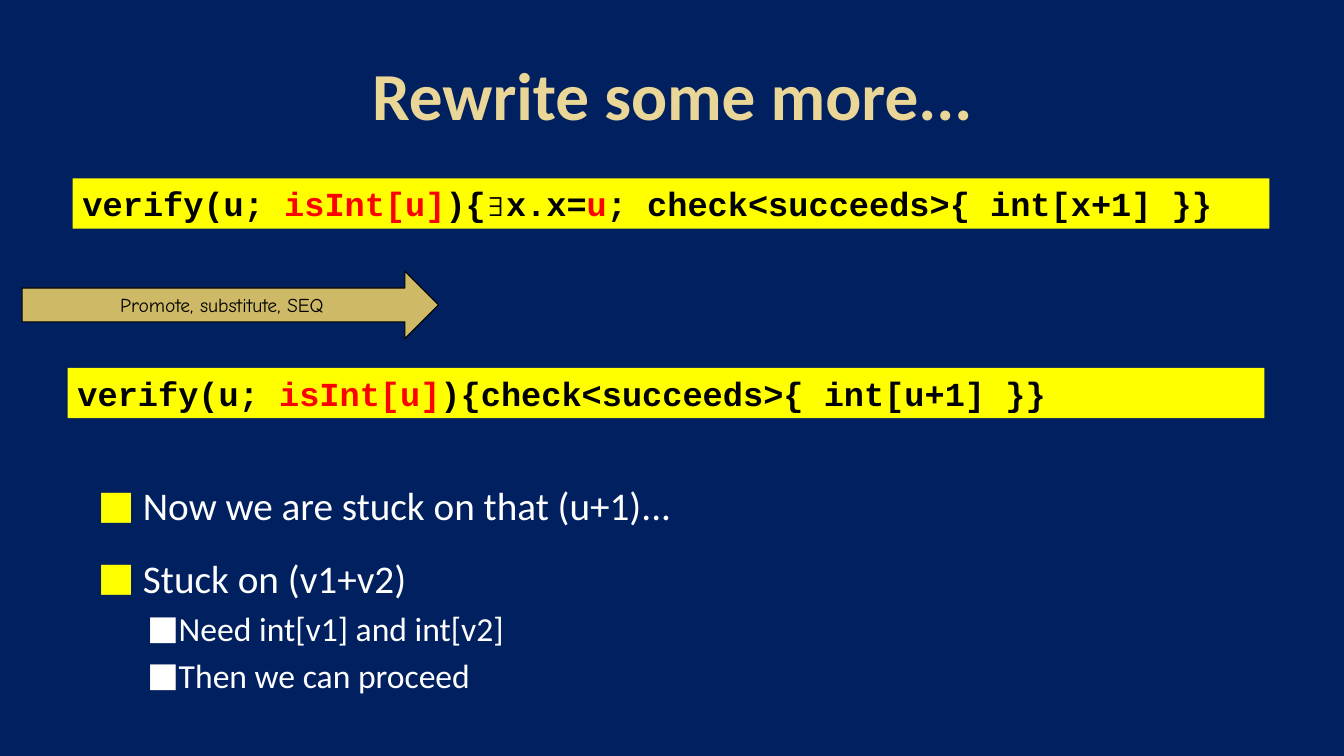
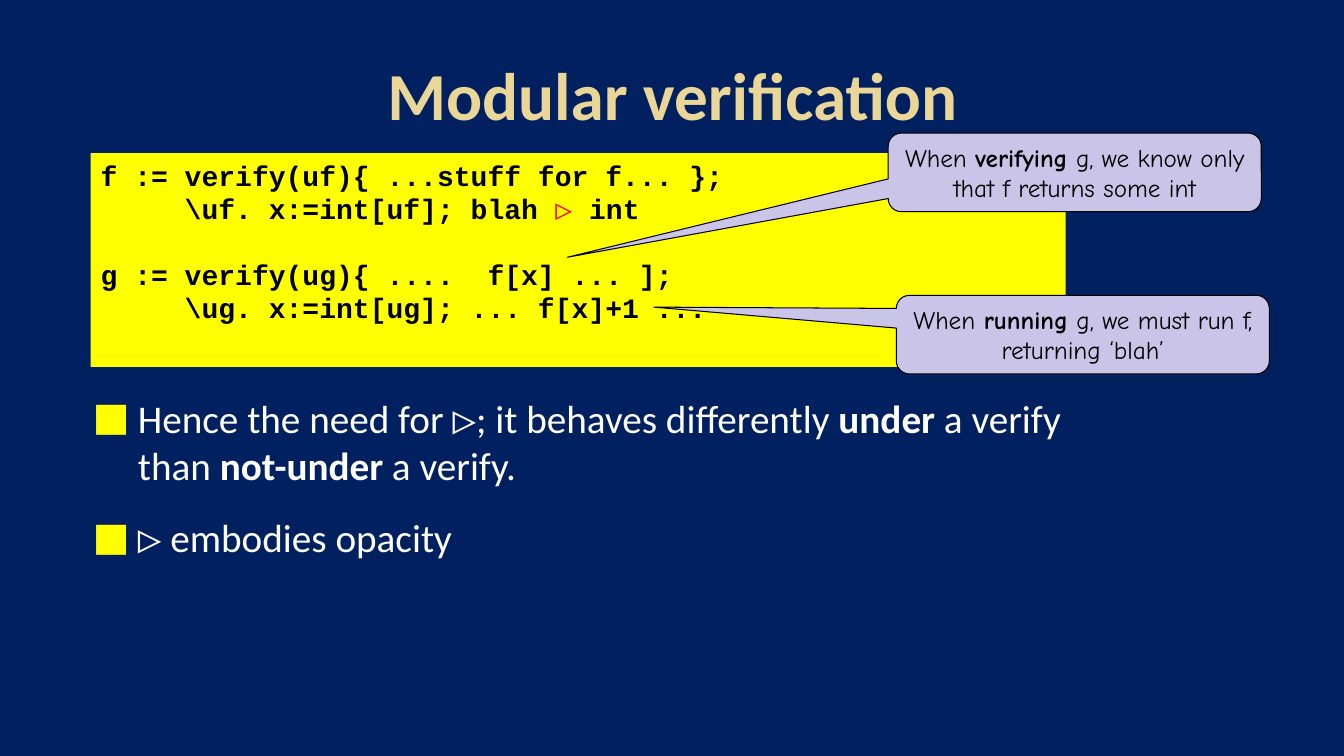
"""Build two slides about rewriting and modular verification."""
from dataclasses import dataclass

from lxml.etree import SubElement
from pptx import Presentation
from pptx.dml.color import RGBColor as Rgb
from pptx.enum.shapes import MSO_SHAPE as Shape
from pptx.enum.text import MSO_ANCHOR as Anchor, PP_ALIGN as Align
from pptx.oxml.ns import qn
from pptx.util import Inches, Pt


@dataclass(frozen=True)
class Theme:
    navy: Rgb = Rgb.from_string("002060")
    cream: Rgb = Rgb.from_string("EAD696")
    yellow: Rgb = Rgb.from_string("FFFF00")
    gold: Rgb = Rgb.from_string("CEB966")
    lilac: Rgb = Rgb.from_string("CBC4E9")
    black: Rgb = Rgb.from_string("000000")
    white: Rgb = Rgb.from_string("FFFFFF")
    red: Rgb = Rgb.from_string("FF0000")
    title_size: Pt = Pt(48)
    body_sizes: tuple = (Pt(28), Pt(24))
    code_size: Pt = Pt(24)
    listing_size: Pt = Pt(20)
    callout_size: Pt = Pt(18)
    arrow_size: Pt = Pt(14)


theme = Theme()
CODE = {"name": "Courier New", "bold": True, "color": theme.black}
NOTE = {"name": "Comic Neue", "color": theme.black}
BODY = {"name": "Calibri", "color": theme.white}
TITLE = {"name": "Calibri", "bold": True, "color": theme.cream, "size": theme.title_size}
RED = {"color": theme.red}
BOLD = {"bold": True}
SYMBOL = {"name": "Courier New", "bold": True}
BREAK = ("\n", {})
BULLETS = [
    {"margin": 0.6, "indent": -0.45, "before": Pt(18), "color": theme.yellow},
    {"margin": 0.95, "indent": -0.31, "before": Pt(4.8), "color": theme.white},
]


def write_runs(paragraph, runs, base):
    for text, changes in runs:
        if (text, changes) == BREAK:
            paragraph.add_line_break()
            continue
        run = paragraph.add_run()
        run.text = text
        for key, value in {**base, **changes}.items():
            if key == "color":
                run.font.color.rgb = value
            else:
                setattr(run.font, key, value)


def add_panel(slide, kind, box, fill, line, paragraphs, base, align, anchor):
    shape = slide.shapes.add_shape(kind, *map(Inches, box))
    shape.shadow.inherit = False
    shape.fill.solid()
    shape.fill.fore_color.rgb = fill
    if line is None:
        shape.line.fill.background()
    else:
        shape.line.color.rgb = line
        shape.line.width = Pt(0.75)
    frame = shape.text_frame
    frame.word_wrap = True
    frame.vertical_anchor = anchor
    for index, (before, runs) in enumerate(paragraphs):
        paragraph = frame.add_paragraph() if index else frame.paragraphs[0]
        paragraph.alignment = align
        paragraph.space_before = before
        write_runs(paragraph, runs, base)
    return shape


presentation = Presentation()
presentation.slide_width = Inches(13.33)
presentation.slide_height = Inches(7.5)
background = presentation.slide_master.background.fill
background.solid()
background.fore_color.rgb = theme.navy
title_only = presentation.slide_layouts[5]

contents = [
    ("Rewrite some more...", (0.72, 4.73, 12, 2.23), [
        (0, [("Now we are stuck on that (u+1)...", {})]),
        (0, [("Stuck on (v1+v2)", {})]),
        (1, [("Need int[v1] and int[v2]", {})]),
        (1, [("Then we can proceed", {})]),
    ]),
    ("Modular verification", (0.67, 3.86, 12, 3.04), [
        (0, [("Hence the need for ", {}), ("▷", SYMBOL), ("; it behaves differently ", {}),
             ("under", BOLD), (" a verify", {}), BREAK, ("than ", {}),
             ("not-under", BOLD), (" a verify.", {})]),
        (0, [("▷", SYMBOL), (" embodies opacity", {})]),
    ]),
]

slides = []
for heading, body_box, items in contents:
    slide = presentation.slides.add_slide(title_only)
    slides.append(slide)
    title = slide.shapes.title
    title.left, title.top, title.width, title.height = map(Inches, (0.67, 0.3, 12, 1.25))
    title.text_frame.vertical_anchor = Anchor.MIDDLE
    title.text_frame.paragraphs[0].alignment = Align.CENTER
    write_runs(title.text_frame.paragraphs[0], [(heading, {})], TITLE)

    frame = slide.shapes.add_textbox(*map(Inches, body_box)).text_frame
    frame.word_wrap = True
    for index, (level, runs) in enumerate(items):
        paragraph = frame.add_paragraph() if index else frame.paragraphs[0]
        bullet = BULLETS[level]
        paragraph.level = level
        paragraph.space_before = bullet["before"] if index else Pt(0)
        properties = paragraph._p.get_or_add_pPr()
        properties.set("marL", str(Inches(bullet["margin"])))
        properties.set("indent", str(Inches(bullet["indent"])))
        color = SubElement(properties, qn("a:buClr"))
        SubElement(color, qn("a:srgbClr"), val=str(bullet["color"]))
        SubElement(properties, qn("a:buFont"), typeface="Calibri")
        SubElement(properties, qn("a:buChar"), char="■")
        write_runs(paragraph, runs, {**BODY, "size": theme.body_sizes[level]})

rewrite, modular = slides

verify_start = [("verify(u; ", {}), ("isInt[u]", RED)]
code_lines = [
    (0.72, 1.77, [("){∃x.x=", {}), ("u", RED), ("; check<succeeds>{ int[x+1] }}", {})]),
    (0.67, 3.65, [("){check<succeeds>{ int[u+1] }}", {})]),
]
for left, top, verify_end in code_lines:
    add_panel(rewrite, Shape.RECTANGLE, (left, top, 11.87, 0.5), theme.yellow, None,
              [(Pt(0), verify_start + verify_end)], {**CODE, "size": theme.code_size},
              Align.LEFT, Anchor.TOP)

add_panel(rewrite, Shape.RIGHT_ARROW, (0.22, 2.69, 4.13, 0.67), theme.gold, theme.black,
          [(Pt(0), [("Promote, substitute, SEQ", {})])], {**NOTE, "size": theme.arrow_size},
          Align.CENTER, Anchor.MIDDLE)

listing = [
    (Pt(0), [("f := verify(uf){ ...stuff for f... };", {})]),
    (Pt(0), [("     \\uf. x:=int[uf]; blah ", {}), ("▷ ", RED), ("int", {})]),
    (Pt(22.6), [("g := verify(ug){ ....  f[x] ... ];", {})]),
    (Pt(0), [("     \\ug. x:=int[ug]; ... f[x]+1 ...", {})]),
]
add_panel(modular, Shape.RECTANGLE, (0.9, 1.52, 9.67, 2.12), theme.yellow, None,
          listing, {**CODE, "size": theme.listing_size}, Align.LEFT, Anchor.TOP)

callouts = [
    (8.81, 1.32, (-1.36, 1.08), "verifying", " g, we know only that f returns some int"),
    (8.89, 2.93, (-1.15, -0.35), "running", " g, we must run f, returning ‘blah’"),
]
for left, top, pointer, stressed, ending in callouts:
    callout = add_panel(modular, Shape.ROUNDED_RECTANGULAR_CALLOUT, (left, top, 3.7, 0.78),
                        theme.lilac, theme.black,
                        [(Pt(0), [("When ", {}), (stressed, BOLD), (ending, {})])],
                        {**NOTE, "size": theme.callout_size}, Align.CENTER, Anchor.MIDDLE)
    for index, value in enumerate(pointer):
        callout.adjustments[index] = value

presentation.save("out.pptx")
